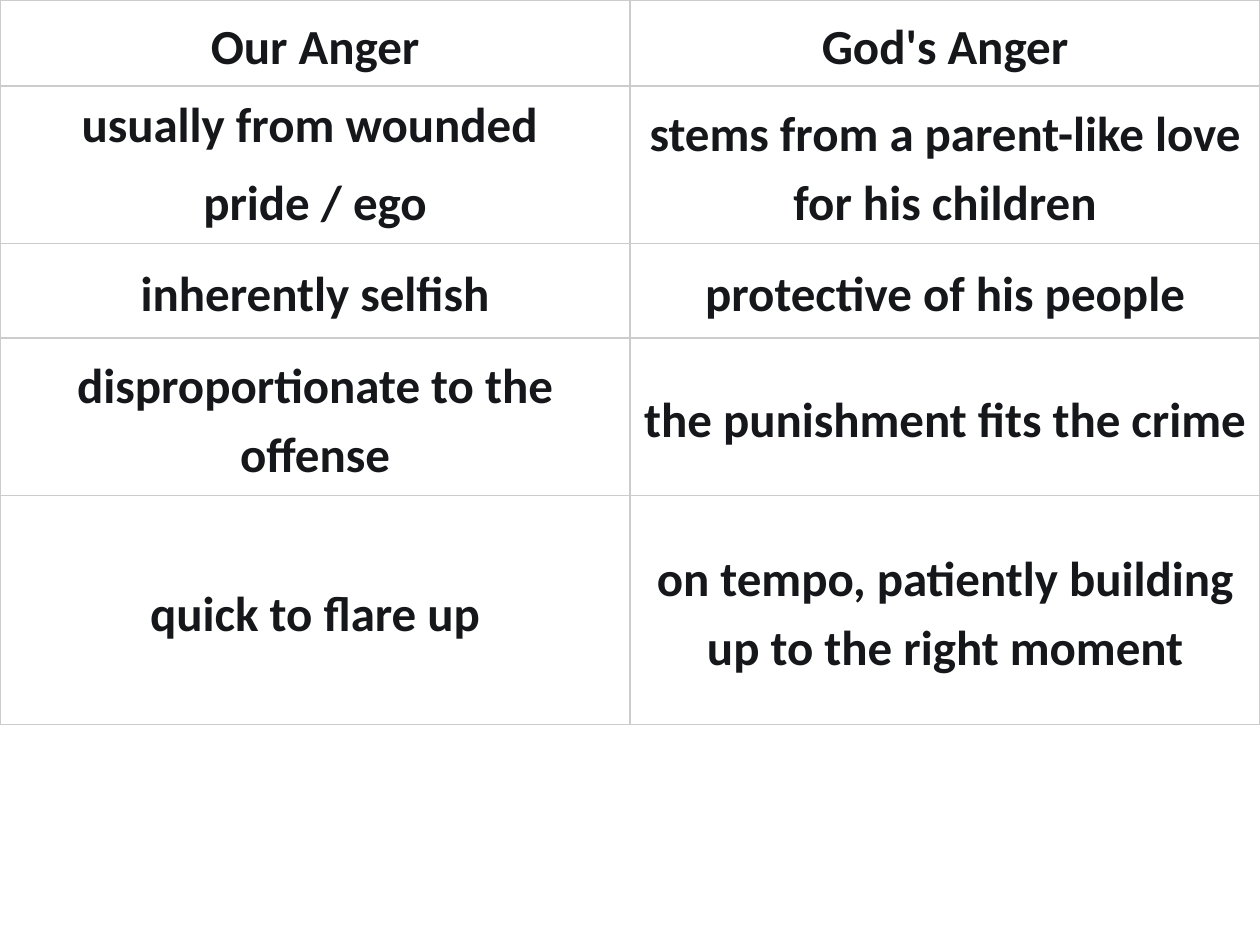
import pptx
import pptx.util
import pptx.dml.color
import pptx.enum.text
import lxml.etree
from pptx.util import Cm
from pptx.oxml.ns import qn


def rgb(value):
    return pptx.dml.color.RGBColor.from_string(value)


def add_text(p, text, size=28, font="Calibri", color="15171A", bold=True, spacing=None):
    p.alignment = pptx.enum.text.PP_ALIGN.CENTER
    p.space_after = pptx.util.Pt(10)
    p.line_spacing = spacing
    r = p.add_run()
    r.text = text
    r.font.size = pptx.util.Pt(size)
    r.font.name = font
    r.font.bold = bold
    r.font.color.rgb = rgb(color)


prs = pptx.Presentation()
prs.slide_width, prs.slide_height = Cm(25.4), Cm(19.05)
s = prs.slides.add_slide(prs.slide_layouts[6])

# Each cell is a list of paragraphs
rows = [
    (1.73, ["Our Anger"], ["God's Anger"]),
    (3.18, ["usually from wounded ", "pride / ego"],
     ["stems from a parent-like love for his children"]),
    (1.9, ["inherently selfish"], ["protective of his people"]),
    (3.18, ["disproportionate to the offense"], ["the punishment fits the crime"]),
    (4.62, ["quick to flare up"],
     ["on tempo, patiently building up to the right moment"]),
]

# Comparison table across the full slide width
height = sum(row[0] for row in rows)
table = s.shapes.add_table(len(rows), 2, 0, 0, prs.slide_width, Cm(height)).table
table.first_row = False
table.horz_banding = False
for column in table.columns:
    column.width = Cm(12.7)

for i, (row_height, *texts) in enumerate(rows):
    table.rows[i].height = Cm(row_height)
    for cell, paragraphs in zip(table.rows[i].cells, texts):
        cell.vertical_anchor = pptx.enum.text.MSO_ANCHOR.MIDDLE
        cell.margin_left = cell.margin_right = Cm(0.1)
        cell.margin_top = cell.margin_bottom = Cm(0.1)

        # Thin grey borders, which must come before the fill
        tcPr = cell._tc.get_or_add_tcPr()
        for side in ("a:lnL", "a:lnR", "a:lnT", "a:lnB"):
            ln = lxml.etree.SubElement(tcPr, qn(side), w=str(pptx.util.Pt(1)))
            fill = lxml.etree.SubElement(ln, qn("a:solidFill"))
            lxml.etree.SubElement(fill, qn("a:srgbClr"), val="CCCCCC")
        cell.fill.background()

        # Single paragraphs are set looser than the split one
        tf = cell.text_frame
        spacing = 1.15 if len(paragraphs) == 1 else None
        for n, text in enumerate(paragraphs):
            p = tf.add_paragraph() if n else tf.paragraphs[0]
            add_text(p, text, spacing=spacing)

prs.save("out.pptx")
